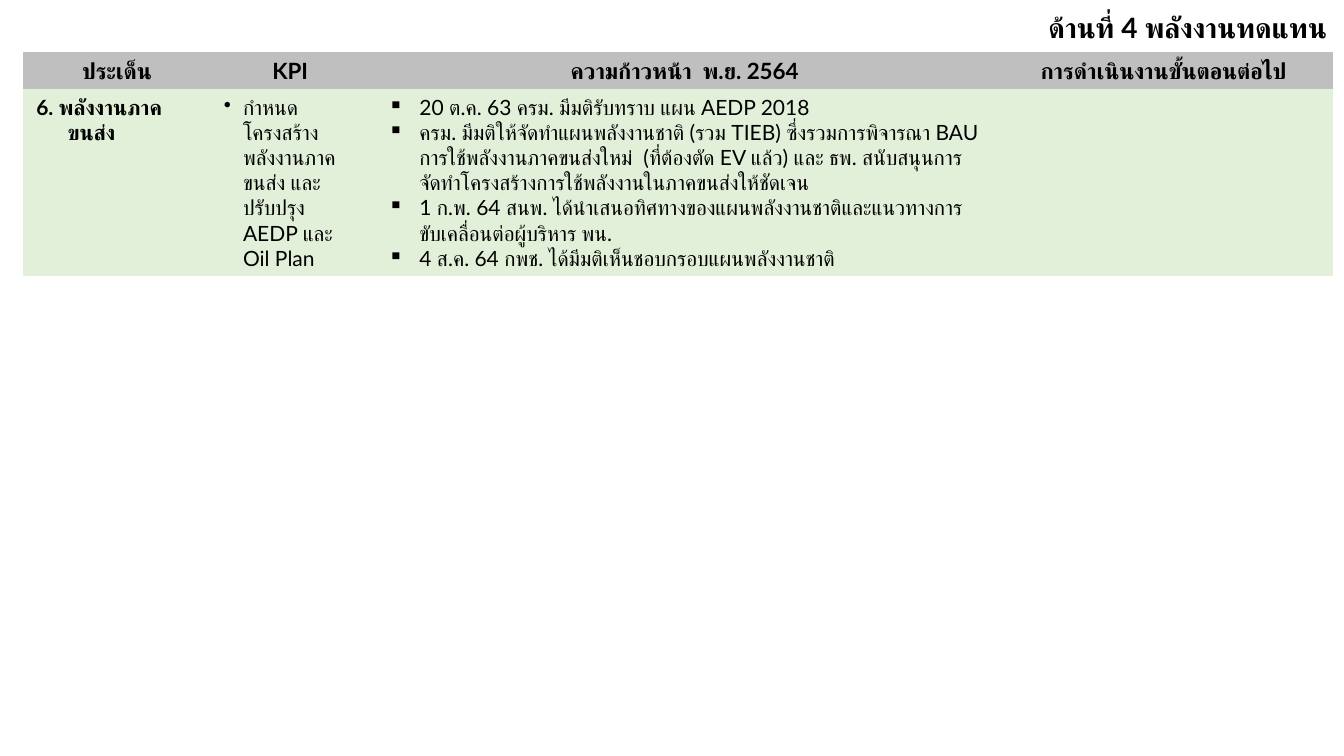
import dataclasses

import lxml.etree
import pptx
import pptx.dml.color
import pptx.enum.text
import pptx.oxml.ns
import pptx.util

ALIGN = pptx.enum.text.PP_ALIGN


@dataclasses.dataclass(frozen=True)
class Theme:
    """Colours, font and type sizes of the slide."""
    font: str = "Lato"
    ink: str = "000000"
    header: str = "BFBFBF"
    body: str = "E2F0D9"
    title_size: int = 20
    header_size: int = 16
    body_size: int = 15
    plain_table: str = "{2D5ABB26-0587-4C30-8999-92F81FD0307C}"


class Deck:
    """Draws elements on one slide, with lengths in percent of its size."""

    def __init__(self, theme):
        """Start a widescreen presentation with a title-only slide."""
        self.theme = theme
        self.show = pptx.Presentation()
        self.show.slide_width = pptx.util.Inches(13.33)
        self.show.slide_height = pptx.util.Inches(7.5)
        self.slide = self.show.slides.add_slide(self.show.slide_layouts[5])

    def across(self, share):
        """Turn a percentage of the slide width into a length."""
        return int(self.show.slide_width * share / 100)

    def down(self, share):
        """Turn a percentage of the slide height into a length."""
        return int(self.show.slide_height * share / 100)

    def assign(self, target, formats):
        """Set each named format value on the target."""
        for name, value in formats.items():
            setattr(target, name, value)

    def typeset(self, paragraph, wording, size, bold, align=ALIGN.LEFT, hang=0, bullet=None):
        """Set one styled paragraph with an optional hanging bullet."""
        paragraph.alignment = align
        properties = paragraph._p.get_or_add_pPr()
        if hang:
            properties.set("marL", str(pptx.util.Inches(hang)))
            properties.set("indent", str(-pptx.util.Inches(hang)))
        if bullet:
            mark = lxml.etree.SubElement(properties, pptx.oxml.ns.qn("a:buChar"))
            mark.set("char", bullet)
        run = paragraph.add_run()
        run.text = wording
        self.assign(run.font, {"size": pptx.util.Pt(size), "bold": bold, "name": self.theme.font})
        run.font.color.rgb = pptx.dml.color.RGBColor.from_string(self.theme.ink)
        thai = lxml.etree.SubElement(run._r.get_or_add_rPr(), pptx.oxml.ns.qn("a:cs"))
        thai.set("typeface", self.theme.font)

    def title(self, wording, left, top, width, height):
        """Place and fill the title."""
        heading = self.slide.shapes.title
        self.assign(heading, {"left": self.across(left), "top": self.down(top),
                              "width": self.across(width), "height": self.down(height)})
        side, edge = pptx.util.Inches(0.17), pptx.util.Inches(0.09)
        self.assign(heading.text_frame, {
            "margin_left": side, "margin_right": side, "margin_top": edge, "margin_bottom": edge,
            "word_wrap": True, "vertical_anchor": pptx.enum.text.MSO_ANCHOR.TOP,
            "auto_size": pptx.enum.text.MSO_AUTO_SIZE.SHAPE_TO_FIT_TEXT})
        self.typeset(heading.text_frame.paragraphs[0], wording, self.theme.title_size, True, ALIGN.RIGHT)

    def cell(self, cell, fill, wordings, style):
        """Fill one table cell and set its paragraphs."""
        side, edge = pptx.util.Inches(0.13), pptx.util.Inches(0.05)
        self.assign(cell, {"margin_left": side, "margin_right": side,
                           "margin_top": edge, "margin_bottom": edge})
        cell.fill.solid()
        cell.fill.fore_color.rgb = pptx.dml.color.RGBColor.from_string(fill)
        frame = cell.text_frame
        for index, wording in enumerate(wordings):
            paragraph = frame.add_paragraph() if index else frame.paragraphs[0]
            self.typeset(paragraph, wording, **style)

    def table(self, left, top, columns, rows, fills, contents):
        """Add an unbordered table with a fill for each row."""
        table = self.slide.shapes.add_table(
            len(rows), len(columns), self.across(left), self.down(top),
            self.across(sum(columns)), self.down(sum(rows))).table
        self.assign(table, {"first_row": False, "horz_banding": False})
        table._tbl.tblPr[0].text = self.theme.plain_table
        for column, share in zip(table.columns, columns):
            column.width = self.across(share)
        for row, share, fill, entries in zip(table.rows, rows, fills, contents):
            row.height = self.down(share)
            for cell, (wordings, style) in zip(row.cells, entries):
                self.cell(cell, fill, wordings, style)


def main():
    """Build the renewable energy progress slide."""
    theme = Theme()
    deck = Deck(theme)
    header = {"size": theme.header_size, "bold": True, "align": ALIGN.CENTER}
    issue = {"size": theme.body_size, "bold": True, "hang": 0.31}
    target = {"size": theme.body_size, "bold": False, "hang": 0.19, "bullet": "•"}
    progress = {"size": theme.body_size, "bold": False, "hang": 0.31, "bullet": "▪"}
    headings = ["ประเด็น", "KPI ", "ความก้าวหน้า  พ.ย. 2564", "การดำเนินงานขั้นตอนต่อไป"]
    milestones = [
        "20 ต.ค. 63 ครม. มีมติรับทราบ แผน AEDP 2018",
        "ครม. มีมติให้จัดทำแผนพลังงานชาติ (รวม TIEB) ซึ่งรวมการพิจารณา BAU "
        "การใช้พลังงานภาคขนส่งใหม่  (ที่ต้องตัด EV แล้ว) และ ธพ. "
        "สนับสนุนการจัดทำโครงสร้างการใช้พลังงานในภาคขนส่งให้ชัดเจน",
        "1 ก.พ. 64 สนพ. ได้นำเสนอทิศทางของแผนพลังงานชาติและแนวทางการขับเคลื่อนต่อผู้บริหาร พน.",
        "4 ส.ค. 64 กพช. ได้มีมติเห็นชอบกรอบแผนพลังงานชาติ",
    ]
    transport = [
        (["6. พลังงานภาคขนส่ง"], issue),
        (["กำหนดโครงสร้างพลังงานภาคขนส่ง และปรับปรุง AEDP และ Oil Plan"], target),
        (milestones, progress),
        ([], progress),
    ]
    deck.table(1.73, 6.93, [13.95, 12.23, 46.06, 25.21], [4, 22.53],
               [theme.header, theme.body],
               [[([heading], header) for heading in headings], transport])
    deck.title("ด้านที่ 4 พลังงานทดแทน", 5.85, 0.13, 94.15, 6.8)
    deck.show.save("out.pptx")


if __name__ == "__main__":
    main()
